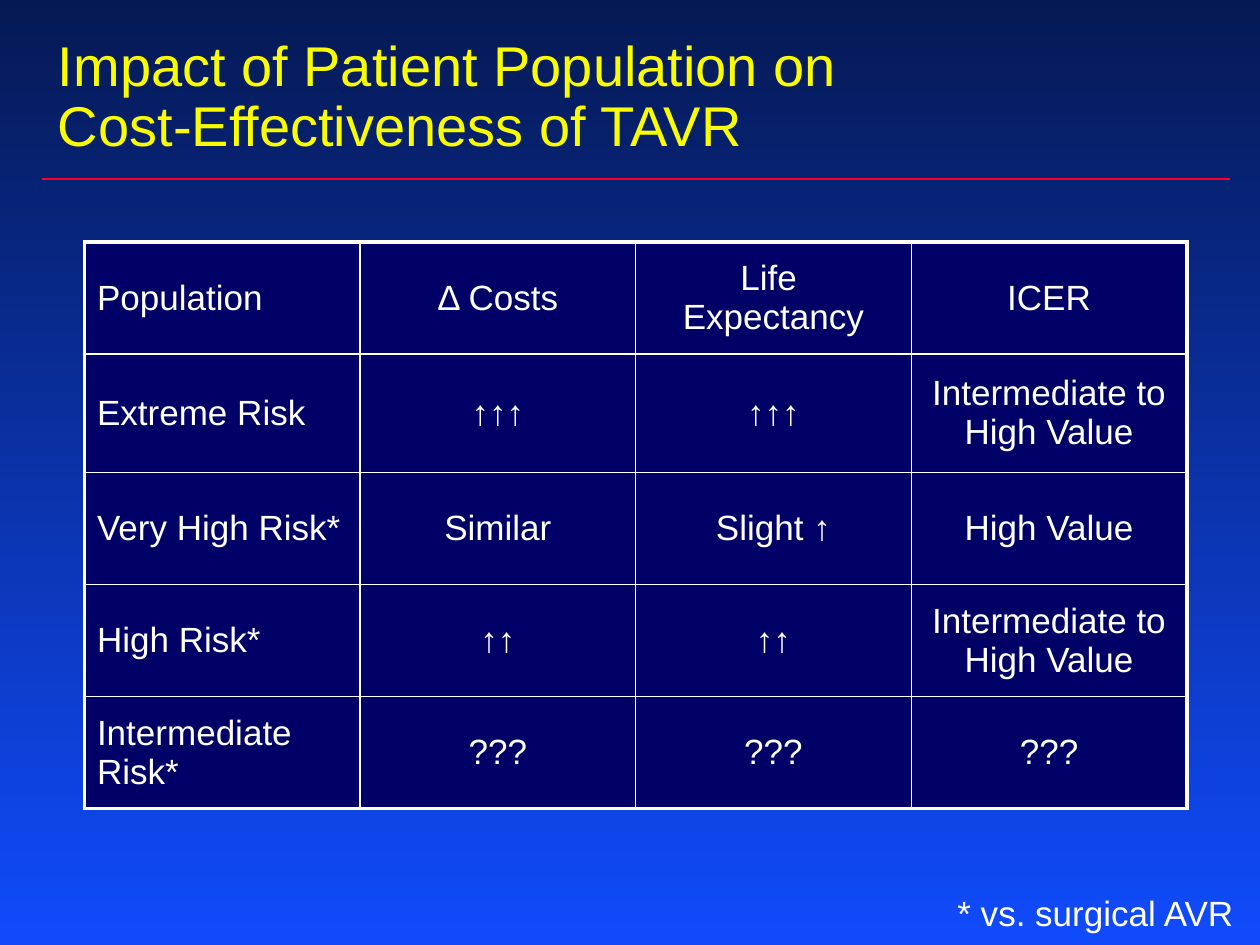
import pptx
import pptx.dml.color
import pptx.enum.shapes
import pptx.enum.text
import pptx.oxml.ns
import pptx.util
from lxml import etree

Inches, Pt = pptx.util.Inches, pptx.util.Pt
PP_ALIGN, ANCHOR = pptx.enum.text.PP_ALIGN, pptx.enum.text.MSO_ANCHOR
AUTO_SIZE = pptx.enum.text.MSO_AUTO_SIZE
qn = pptx.oxml.ns.qn

TITLE = "Impact of Patient Population on \vCost-Effectiveness of TAVR"
ROWS = [
    ("Population", "Δ Costs", "Life \vExpectancy", "ICER"),
    ("Extreme Risk", "↑↑↑", "↑↑↑", "Intermediate to High Value"),
    ("Very High Risk*", "Similar", "Slight ↑", "High Value"),
    ("High Risk*", "↑↑", "↑↑", "Intermediate to High Value"),
    ("Intermediate Risk*", "???", "???", "???"),
]
FOOTNOTE = "* vs. surgical AVR"

FONT = "Arial"
COLORS = {"top": "051954", "bottom": "104BFB", "title": "FAFD00",
          "rule": "FC0128", "cell": "000066", "white": "FFFFFF"}
TABLE_LEFT, TABLE_TOP, TABLE_WIDTH = 0.67, 1.92, 8.75
ROW_HEIGHTS = [0.89, 0.94, 0.89, 0.89, 0.89]
OUTER, INNER = 2.25, 1


def rgb(name):
    return pptx.dml.color.RGBColor.from_string(COLORS[name])


def write(tf, text, size, color, align=PP_ALIGN.LEFT):
    tf.text = text
    p = tf.paragraphs[0]
    p.alignment = align
    for r in p.runs:
        r.font.name, r.font.size = FONT, Pt(size)
        r.font.color.rgb = rgb(color)
    return p


def set_borders(cell, widths):
    """Draw white borders; widths are points for left, right, top, bottom."""
    tc_pr = cell._tc.get_or_add_tcPr()
    for i, (side, width) in enumerate(zip("LRTB", widths)):
        ln = etree.Element(qn("a:ln" + side), w=str(Pt(width)))
        fill = etree.SubElement(ln, qn("a:solidFill"))
        etree.SubElement(fill, qn("a:srgbClr"), val=COLORS["white"])
        tc_pr.insert(i, ln)


def add_background(slide):
    fill = slide.background.fill
    fill.gradient()
    fill.gradient_angle = 270
    for stop, name in zip(fill.gradient_stops, ("top", "bottom")):
        stop.color.rgb = rgb(name)


def add_title(slide):
    sp = slide.shapes.title
    sp.left, sp.top = Inches(0.36), Inches(0.16)
    sp.width, sp.height = Inches(9.4), Inches(1.25)
    tf = sp.text_frame
    tf.auto_size = AUTO_SIZE.NONE
    tf.vertical_anchor = ANCHOR.MIDDLE
    write(tf, TITLE, 32, "title").line_spacing = 0.89


def add_rule(slide):
    y = Inches(1.42)
    line = slide.shapes.add_connector(
        pptx.enum.shapes.MSO_CONNECTOR.STRAIGHT, Inches(0.33), y, Inches(9.76), y)
    line.line.color.rgb = rgb("rule")
    line.line.width = Pt(1.5)
    etree.SubElement(line._element.spPr, qn("a:effectLst"))


def add_population_table(slide):
    n_rows, n_cols = len(ROWS), len(ROWS[0])
    table = slide.shapes.add_table(
        n_rows, n_cols, Inches(TABLE_LEFT), Inches(TABLE_TOP),
        Inches(TABLE_WIDTH), Inches(sum(ROW_HEIGHTS))).table
    for col in table.columns:
        col.width = Inches(TABLE_WIDTH / n_cols)
    for i, (texts, height) in enumerate(zip(ROWS, ROW_HEIGHTS)):
        table.rows[i].height = Inches(height)
        for j, text in enumerate(texts):
            cell = table.cell(i, j)
            cell.vertical_anchor = ANCHOR.MIDDLE
            cell.fill.solid()
            cell.fill.fore_color.rgb = rgb("cell")
            align = PP_ALIGN.CENTER if j else PP_ALIGN.LEFT
            p = write(cell.text_frame, text, 20, "white", align)
            for r in p.runs:
                r.font.bold = False
            on_edge = (j == 0, j == n_cols - 1, i == 0, i == n_rows - 1)
            set_borders(cell, [OUTER if edge else INNER for edge in on_edge])


def add_footnote(slide):
    sp = slide.shapes.add_textbox(Inches(7.5), Inches(7.03), Inches(2.41), Inches(0.44))
    tf = sp.text_frame
    tf.word_wrap = False
    tf.auto_size = AUTO_SIZE.SHAPE_TO_FIT_TEXT
    write(tf, FOOTNOTE, 20, "white")


def main():
    prs = pptx.Presentation()
    prs.slide_width, prs.slide_height = Inches(10), Inches(7.5)
    slide = prs.slides.add_slide(prs.slide_layouts.get_by_name("Title Only"))
    add_background(slide)
    add_title(slide)
    add_rule(slide)
    add_population_table(slide)
    add_footnote(slide)
    prs.save("out.pptx")


if __name__ == "__main__":
    main()
